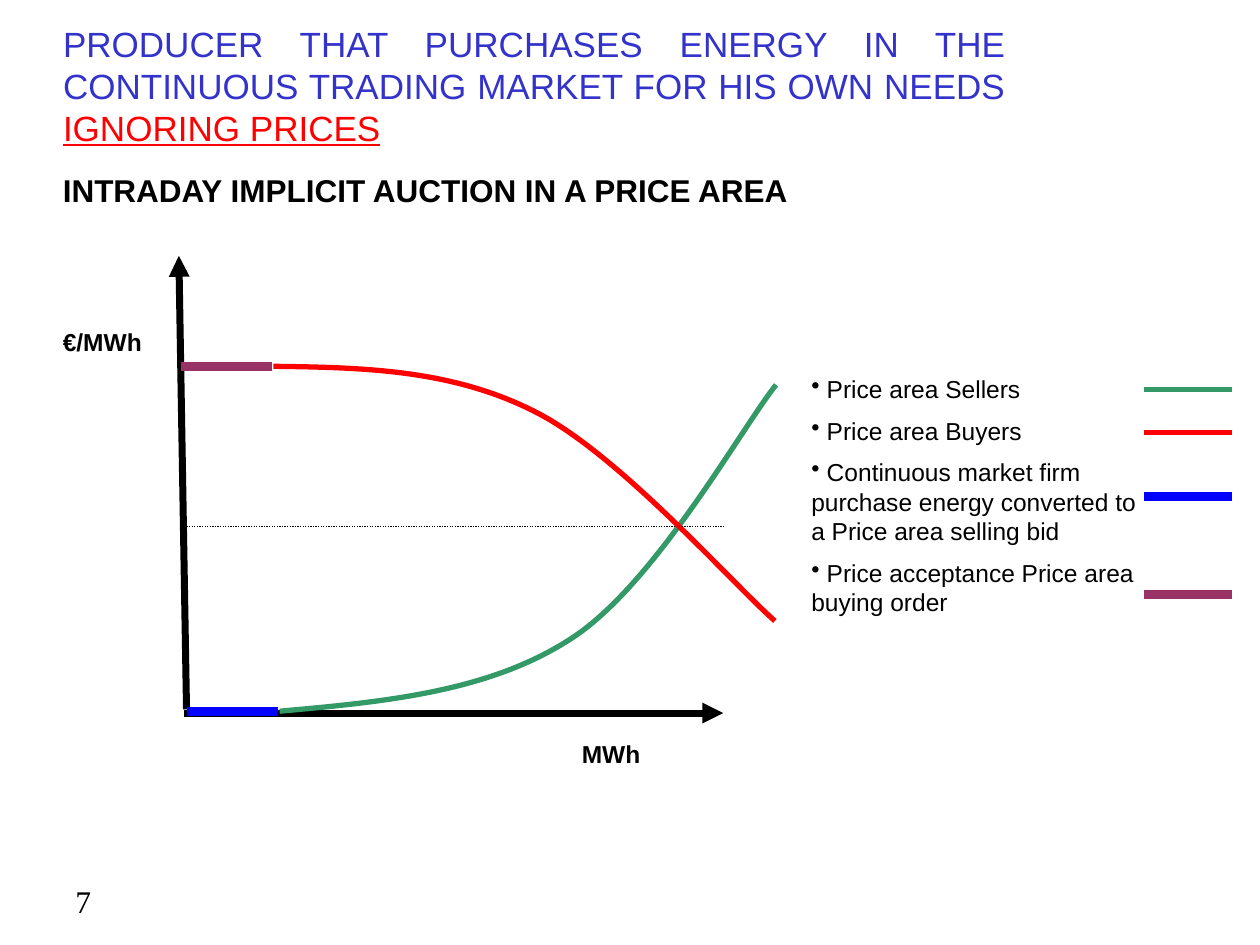
from dataclasses import dataclass

from lxml.etree import SubElement
from pptx import Presentation
from pptx.dml.color import RGBColor
from pptx.enum.dml import MSO_LINE
from pptx.enum.shapes import MSO_CONNECTOR
from pptx.enum.text import MSO_ANCHOR, MSO_AUTO_SIZE, PP_ALIGN
from pptx.oxml.ns import qn
from pptx.util import Pt


@dataclass(frozen=True)
class Theme:
    black: RGBColor = RGBColor(0x00, 0x00, 0x00)
    title: RGBColor = RGBColor(0x33, 0x33, 0xCC)
    sellers: RGBColor = RGBColor(0x33, 0x99, 0x66)
    buyers: RGBColor = RGBColor(0xFF, 0x00, 0x00)
    purchase: RGBColor = RGBColor(0x00, 0x00, 0xFF)
    acceptance: RGBColor = RGBColor(0x99, 0x33, 0x66)
    font: str = "Arial"
    number_font: str = "Times New Roman"
    title_size: int = 20
    heading_size: int = 18
    body_size: int = 14
    axis_width: int = 4
    curve_width: int = 3
    bid_width: int = 5


THEME = Theme()
LEFT = 28.8
LEGEND_X = (653.8, 704.2)
LEGEND = [
    ("Price area Sellers", 222.5, THEME.sellers, THEME.curve_width),
    ("Price area Buyers", 247, THEME.buyers, THEME.curve_width),
    ("Continuous market firm purchase energy converted to a Price area selling bid",
     283.7, THEME.purchase, THEME.bid_width),
    ("Price acceptance Price area buying order", 339.8, THEME.acceptance, THEME.bid_width),
]
SELLERS_CURVE = [(159.8, 406.4), (220.3, 401), (280.8, 395.3), (327.8, 364),
                 (375.1, 332.6), (424.1, 244.1), (443.5, 219.9)]
BUYERS_CURVE = [(156.2, 209.3), (207.4, 210), (258.5, 211), (306.4, 235.6),
                (354.2, 259.9), (419.8, 334.8), (442.8, 354.8)]


def style_font(font, size, color=THEME.black, bold=False, name=THEME.font):
    font.name, font.size, font.bold = name, Pt(size), bold
    font.color.rgb = color


def add_label(slide, bounds, text, size, bold=True, name=THEME.font):
    box = slide.shapes.add_textbox(*map(Pt, bounds))
    box.text_frame.word_wrap = True
    para = box.text_frame.paragraphs[0]
    para.text = text
    style_font(para.font, size, bold=bold, name=name)


def add_line(shapes, start, end, color, width):
    line = shapes.add_connector(MSO_CONNECTOR.STRAIGHT, *map(Pt, start + end))
    line.line.color.rgb = color
    line.line.width = Pt(width)
    SubElement(line._element.spPr, qn("a:effectLst"))
    return line


def add_axis(slide, start, end):
    axis = add_line(slide.shapes, start, end, THEME.black, THEME.axis_width)
    SubElement(axis.line._get_or_add_ln(), qn("a:tailEnd"), type="triangle")


def add_curve(slide, points, color):
    """Draw a start point followed by cubic Bézier triples."""
    start, *controls = [(Pt(x), Pt(y)) for x, y in points]
    builder = slide.shapes.build_freeform(*start)
    builder.add_line_segments(controls, close=False)
    curve = builder.convert_to_shape()
    segments = list(curve._element.iter(qn("a:lnTo")))
    outline = segments[0].getparent()
    for first in range(0, len(segments), 3):
        bezier = SubElement(outline, qn("a:cubicBezTo"))
        for segment in segments[first:first + 3]:
            bezier.append(segment[0])
            outline.remove(segment)
    curve.shadow.inherit = False
    curve.fill.background()
    curve.line.color.rgb = color
    curve.line.width = Pt(THEME.curve_width)


def add_title(slide):
    title = slide.shapes.title
    title.left, title.top, title.width, title.height = map(Pt, (LEFT, 26.6, 553, 44.6))
    frame = title.text_frame
    frame.word_wrap = True
    frame.auto_size = MSO_AUTO_SIZE.NONE
    frame.vertical_anchor = MSO_ANCHOR.MIDDLE
    para = frame.paragraphs[0]
    para.alignment = PP_ALIGN.JUSTIFY
    style_font(para.font, THEME.title_size, THEME.title)
    span = para.add_run()
    span.text = ("PRODUCER THAT PURCHASES ENERGY IN THE CONTINUOUS TRADING MARKET "
                 "FOR HIS OWN NEEDS ")
    span = para.add_run()
    span.text = "IGNORING PRICES"
    span.font.underline = True
    span.font.color.rgb = THEME.buyers


def add_chart_drawing(slide):
    add_axis(slide, (105.1, 407.5), (413.3, 407.5))
    add_axis(slide, (106.6, 405.4), (102.2, 146.2))
    add_curve(slide, SELLERS_CURVE, THEME.sellers)
    add_curve(slide, BUYERS_CURVE, THEME.buyers)
    add_line(slide.shapes, (103.7, 209.5), (155.5, 209.5), THEME.acceptance, THEME.bid_width)
    add_line(slide.shapes, (106.8, 406.6), (158.6, 406.6), THEME.purchase, THEME.bid_width)
    price = add_line(slide.shapes, (105.1, 301), (413.6, 301), THEME.black, 0.75)
    price.line.dash_style = MSO_LINE.ROUND_DOT
    add_label(slide, (LEFT, 183.6, 67, 23.8), "€/MWh", THEME.body_size)
    add_label(slide, (325.4, 419, 65.5, 23.8), "MWh", THEME.body_size)


def add_legend(slide):
    keys = slide.shapes.add_group_shape()
    box = slide.shapes.add_textbox(*map(Pt, (456.5, 210.2, 210.2, 151.2)))
    frame = box.text_frame
    frame.word_wrap = True
    for index, (text, y, color, width) in enumerate(LEGEND):
        add_line(keys.shapes, (LEGEND_X[0], y), (LEGEND_X[1], y), color, width)
        para = frame.add_paragraph() if index else frame.paragraphs[0]
        para.text = f" {text}"
        if index:
            para.space_before = Pt(THEME.body_size / 2)
        SubElement(para._p.get_or_add_pPr(), qn("a:buChar"), char="•")
        style_font(para.font, THEME.body_size)


def main():
    deck = Presentation()
    deck.slide_width, deck.slide_height = Pt(720), Pt(540)
    slide = deck.slides.add_slide(deck.slide_layouts[5])
    add_title(slide)
    add_label(slide, (LEFT, 94.3, 678.2, 28.8),
              "INTRADAY IMPLICIT AUCTION IN A PRICE AREA", THEME.heading_size)
    add_chart_drawing(slide)
    add_legend(slide)
    add_label(slide, (36, 500.4, 167.8, 28.8), "7", THEME.heading_size,
              bold=False, name=THEME.number_font)
    deck.save("out.pptx")


if __name__ == "__main__":
    main()
